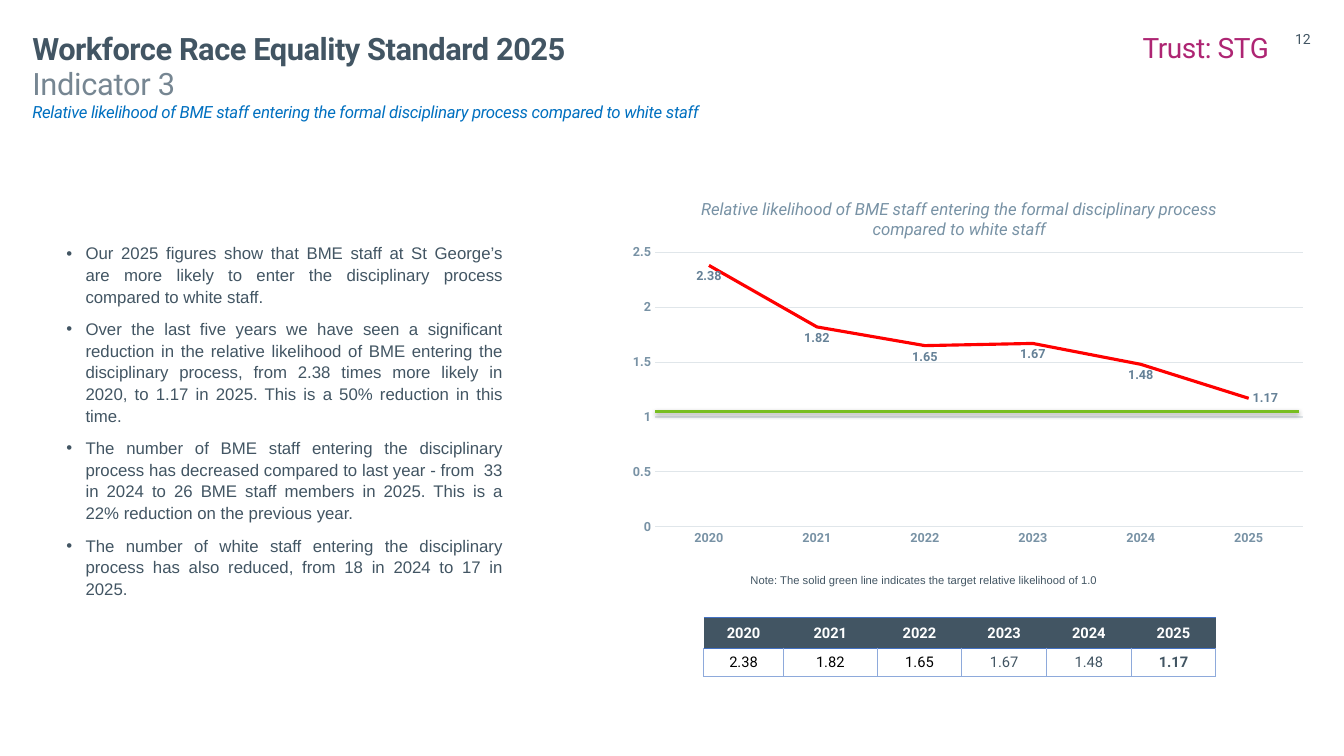
from lxml import etree
from pptx import Presentation
from pptx.chart.data import CategoryChartData
from pptx.dml.color import RGBColor
from pptx.enum.chart import XL_CHART_TYPE as ChartType, XL_LABEL_POSITION as LabelPosition
from pptx.enum.chart import XL_MARKER_STYLE as MarkerStyle, XL_TICK_MARK as TickMark
from pptx.enum.shapes import MSO_CONNECTOR as Connector
from pptx.enum.text import MSO_ANCHOR as Anchor, PP_ALIGN as Align
from pptx.oxml import parse_xml
from pptx.oxml.ns import nsdecls, qn
from pptx.util import Inches, Pt

SLATE = RGBColor(0x42, 0x55, 0x63)
GREY = RGBColor(0x76, 0x86, 0x92)
BLUE = RGBColor(0x00, 0x70, 0xC0)
MAGENTA = RGBColor(0xAE, 0x25, 0x73)
AXIS_TEXT = RGBColor(0x78, 0x92, 0xA5)
LABEL_TEXT = RGBColor(0x65, 0x81, 0x97)
GRID = RGBColor(0xE0, 0xE6, 0xEA)
RED = RGBColor(0xFF, 0x00, 0x00)
GREEN = RGBColor(0x78, 0xBE, 0x20)
WHITE = RGBColor(0xFF, 0xFF, 0xFF)
BLACK = RGBColor(0x00, 0x00, 0x00)
STRONG_BORDER = RGBColor(0x44, 0x72, 0xC4)
LIGHT_BORDER = RGBColor(0x8E, 0xAA, 0xDB)
NO_TABLE_STYLE = "{2D5ABB26-0587-4C30-8999-92F81FD0307C}"

INDICATOR = "Relative likelihood of BME staff entering the formal disciplinary process compared to white staff"
# left, top, width, height, alignment, lines of (text, size, colour, bold, italic, spacing)
HEADINGS = [
    (12.67, 0.3, 0.33, 0.25, Align.RIGHT, [("12", 10, SLATE, False, False, 0)]),
    (0.32, 0.3, 7.01, 0.34, Align.LEFT,
     [("Workforce Race Equality Standard 2025", 22, SLATE, True, False, -30)]),
    (0.32, 0.64, 8.68, 0.76, Align.LEFT,
     [("Indicator 3", 22, GREY, False, False, -20), (INDICATOR, 12, BLUE, False, True, -20)]),
    (10.75, 0.3, 1.9, 0.34, Align.RIGHT, [("Trust: STG ", 20, MAGENTA, False, False, -30)]),
]
FINDINGS = [
    "Our 2025 figures show that BME staff at St George’s are more likely to enter the disciplinary "
    "process compared to white staff.",
    "Over the last five years we have seen a significant reduction in the relative likelihood of BME "
    "entering the disciplinary process, from 2.38 times more likely in 2020, to 1.17 in 2025. "
    "This is a 50% reduction in this time.",
    "The number of BME staff entering the disciplinary process has decreased compared to last year - "
    "from  33 in 2024 to 26 BME staff members in 2025. This is a 22% reduction on the previous year.",
    "The number of white staff entering the disciplinary process has also reduced, from 18 in 2024 "
    "to 17 in 2025.",
]
NOTE = "Note: The solid green line indicates the target relative likelihood of 1.0"
LIKELIHOOD = {"2020": 2.38, "2021": 1.82, "2022": 1.65, "2023": 1.67, "2024": 1.48, "2025": 1.17}
COLUMN_WIDTHS = [0.79, 0.93, 0.84, 0.84, 0.84, 0.84]
ROW_HEIGHTS = [0.3, 0.28]
VALUE_COLOURS = [BLACK] * 3 + [SLATE] * 3


def style_font(font, size, colour, bold=False, italic=False, name="Roboto"):
    font.name, font.size, font.bold, font.italic = name, Pt(size), bold, italic
    font.color.rgb = colour


def add_text_frame(slide, left, top, width, height):
    frame = slide.shapes.add_textbox(Inches(left), Inches(top), Inches(width), Inches(height)).text_frame
    frame.word_wrap = True
    return frame


def next_paragraph(frame, index):
    return frame.paragraphs[0] if index == 0 else frame.add_paragraph()


def add_run(paragraph, text, *font_style, **font_options):
    run = paragraph.add_run()
    run.text = text
    style_font(run.font, *font_style, **font_options)
    return run


def space_lines(paragraph, alignment):
    paragraph.alignment = alignment
    paragraph.line_spacing = 1.07
    paragraph.space_after = Pt(8)


def add_heading(slide, left, top, width, height, alignment, lines):
    frame = add_text_frame(slide, left, top, width, height)
    frame.margin_left = frame.margin_top = frame.margin_right = frame.margin_bottom = 0
    for index, (text, size, colour, bold, italic, spacing) in enumerate(lines):
        paragraph = next_paragraph(frame, index)
        paragraph.alignment = alignment
        run = add_run(paragraph, text, size, colour, bold, italic)
        run.font._element.set("spc", str(spacing))


def add_findings(slide):
    frame = add_text_frame(slide, 0.31, 2.35, 4.78, 3.66)
    for index, text in enumerate(FINDINGS):
        paragraph = next_paragraph(frame, index)
        properties = paragraph._p.get_or_add_pPr()
        properties.set("marL", str(Inches(0.44)))
        properties.set("indent", str(Inches(-0.19)))
        etree.SubElement(properties, qn("a:buFont")).set("typeface", "Arial")
        etree.SubElement(properties, qn("a:buChar")).set("char", "•")
        space_lines(paragraph, Align.JUSTIFY)
        add_run(paragraph, text, 12, SLATE, name="Arial")


def add_note(slide):
    paragraph = add_text_frame(slide, 6.7, 5.63, 4.93, 0.29).paragraphs[0]
    space_lines(paragraph, Align.CENTER)
    add_run(paragraph, NOTE, 8, SLATE, name="Arial")


def fix_plot_area(chart, x, y, width, height):
    """Pin the inner plot area, in fractions of the chart."""
    plot_area = chart._chartSpace.chart.plotArea
    for layout in plot_area.findall(qn("c:layout")):
        plot_area.remove(layout)
    plot_area.insert(0, parse_xml(
        f'<c:layout {nsdecls("c")}><c:manualLayout><c:layoutTarget val="inner"/>'
        '<c:xMode val="edge"/><c:yMode val="edge"/>'
        f'<c:x val="{x}"/><c:y val="{y}"/><c:w val="{width}"/><c:h val="{height}"/>'
        '</c:manualLayout></c:layout>'))


def add_likelihood_chart(slide):
    data = CategoryChartData()
    data.categories = list(LIKELIHOOD)
    data.add_series("Series 1", list(LIKELIHOOD.values()))
    chart = slide.shapes.add_chart(ChartType.LINE, Inches(5.93), Inches(1.8),
                                   Inches(7.17), Inches(3.78), data).chart
    style_font(chart.font, 10, SLATE, True)
    chart.has_legend = False
    chart.has_title = True
    add_run(chart.chart_title.text_frame.paragraphs[0], INDICATOR, 12, AXIS_TEXT, italic=True)
    fix_plot_area(chart, 0.079, 0.186, 0.896, 0.721)

    years, scale = chart.category_axis, chart.value_axis
    for axis in (years, scale):
        axis.major_tick_mark = axis.minor_tick_mark = TickMark.NONE
        style_font(axis.tick_labels.font, 9, AXIS_TEXT, True)
    scale.minimum_scale, scale.maximum_scale, scale.major_unit = 0, 2.5, 0.5
    scale.format.line.fill.background()
    for line in (years.format.line, scale.major_gridlines.format.line):
        line.color.rgb, line.width = GRID, Pt(0.75)

    chart.plots[0].vary_by_categories = False
    series = chart.plots[0].series[0]
    series.smooth = False
    series.marker.style = MarkerStyle.NONE
    series.format.line.color.rgb, series.format.line.width = RED, Pt(2.25)
    last_label = series.points[len(LIKELIHOOD) - 1].data_label
    series.data_labels.show_value = True
    for labels, position in ((series.data_labels, LabelPosition.BELOW), (last_label, LabelPosition.RIGHT)):
        style_font(labels.font, 9, LABEL_TEXT, True)
        labels.position = position


def add_target_line(slide):
    line = slide.shapes.add_connector(Connector.STRAIGHT, Inches(6.5), Inches(4.08),
                                      Inches(12.88), Inches(4.08))
    line.line.color.rgb, line.line.width = GREEN, Pt(2)
    line._element.spPr.append(parse_xml(
        f'<a:effectLst {nsdecls("a")}><a:outerShdw blurRad="{Pt(3.1)}" dist="{Pt(1.6)}" dir="5400000" '
        'rotWithShape="0"><a:srgbClr val="000000"><a:alpha val="38000"/></a:srgbClr>'
        '</a:outerShdw></a:effectLst>'))


def set_borders(cell, **colours):
    """Draw 1 pt borders; sides are given in the order L, R, T, B."""
    for side, colour in colours.items():
        cell._tc.get_or_add_tcPr().append(parse_xml(
            f'<a:ln{side} {nsdecls("a")} w="{Pt(1)}"><a:solidFill><a:srgbClr val="{colour}"/>'
            f'</a:solidFill></a:ln{side}>'))


def add_likelihood_table(slide):
    table = slide.shapes.add_table(2, len(LIKELIHOOD), Inches(6.98), Inches(6.13),
                                   Inches(sum(COLUMN_WIDTHS)), Inches(sum(ROW_HEIGHTS))).table
    table.horz_banding = False
    table._tbl.tblPr.find(qn("a:tableStyleId")).text = NO_TABLE_STYLE
    for row, height in zip(table.rows, ROW_HEIGHTS):
        row.height = Inches(height)
    for index, (year, value) in enumerate(LIKELIHOOD.items()):
        table.columns[index].width = Inches(COLUMN_WIDTHS[index])
        header, body = table.cell(0, index), table.cell(1, index)
        set_borders(header, T=STRONG_BORDER, B=STRONG_BORDER)
        set_borders(body, L=LIGHT_BORDER, R=LIGHT_BORDER, T=STRONG_BORDER, B=LIGHT_BORDER)
        header.fill.solid()
        header.fill.fore_color.rgb = SLATE
        body.fill.background()
        is_latest = index == len(LIKELIHOOD) - 1
        for cell, text, colour, bold in ((header, year, WHITE, True),
                                         (body, str(value), VALUE_COLOURS[index], is_latest)):
            cell.vertical_anchor = Anchor.MIDDLE
            cell.margin_left = cell.margin_right = Inches(0.07)
            cell.margin_top = cell.margin_bottom = 0
            paragraph = cell.text_frame.paragraphs[0]
            space_lines(paragraph, Align.CENTER)
            add_run(paragraph, text, 10.5, colour, bold)


presentation = Presentation()
presentation.slide_width, presentation.slide_height = Inches(13.33), Inches(7.5)
slide = presentation.slides.add_slide(presentation.slide_layouts[6])
add_likelihood_chart(slide)
for heading in HEADINGS:
    add_heading(slide, *heading)
add_findings(slide)
add_note(slide)
add_target_line(slide)
add_likelihood_table(slide)
presentation.save("out.pptx")
